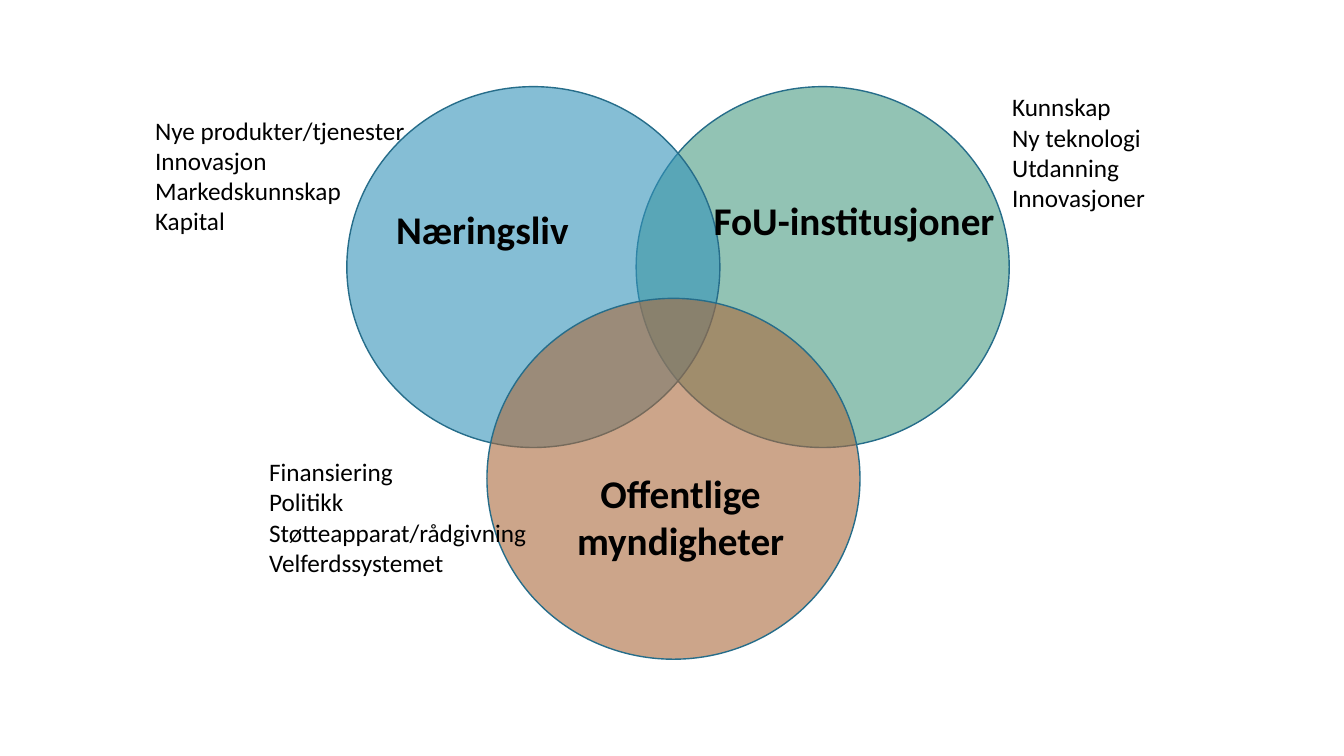
from lxml import etree
from pptx import Presentation
from pptx.dml.color import RGBColor
from pptx.enum import shapes, text
from pptx.oxml import ns
from pptx.util import Inches, Pt

CIRCLE_SIZE = (3.7, 3.58)
CIRCLES = [
    (6.31, 0.86, "4A9B83"),
    (3.44, 0.86, "3494BA"),
    (4.83, 2.96, "AA693C"),
]
LEFT, CENTER = text.PP_ALIGN.LEFT, text.PP_ALIGN.CENTER
SECTORS = [
    ("Næringsliv", (3.83, 1.99, 2.48, 0.57), LEFT),
    ("FoU-institusjoner", (6.98, 1.9, 3.09, 0.57), LEFT),
    ("Offentlige myndigheter", (5.51, 4.61, 2.48, 1.04), CENTER),
]
CONTRIBUTIONS = [
    (["Finansiering", "Politikk", "Støtteapparat/rådgivning", "Velferdssystemet"],
     (2.57, 4.48, 2.78, 1.31)),
    (["Kunnskap", "Ny teknologi", "Utdanning", "Innovasjoner"],
     (9.94, 0.86, 1.53, 1.31)),
    (["Nye produkter/tjenester", "Innovasjon", "Markedskunnskap", "Kapital"],
     (1.44, 1.09, 2.7, 1.31)),
]


def color(value):
    return RGBColor.from_string(value)


def add_circle(slide, left, top, fill):
    box = [Inches(n) for n in (left, top, *CIRCLE_SIZE)]
    shape = slide.shapes.add_shape(shapes.MSO_SHAPE.OVAL, *box)
    shape.shadow.inherit = False
    shape.fill.solid()
    shape.fill.fore_color.rgb = color(fill)
    fill_color = shape.fill._xPr.find(ns.qn("a:solidFill"))[0]
    etree.SubElement(fill_color, ns.qn("a:alpha"), val="60000")
    shape.line.color.rgb = color("266D8A")
    shape.line.width = Pt(1)


def add_text(slide, lines, box, size, bold=False, wrap=True, align=LEFT):
    shape = slide.shapes.add_textbox(*[Inches(n) for n in box])
    frame = shape.text_frame
    frame.word_wrap = wrap
    frame.auto_size = text.MSO_AUTO_SIZE.SHAPE_TO_FIT_TEXT
    for index, line in enumerate(lines):
        paragraph = frame.add_paragraph() if index else frame.paragraphs[0]
        paragraph.alignment = align
        run = paragraph.add_run()
        run.text = line
        run.font.name = "Calibri"
        run.font.size = Pt(size)
        run.font.bold = bold
        run.font.color.rgb = color("000000")


def main():
    presentation = Presentation()
    presentation.slide_width = Inches(13.33)
    presentation.slide_height = Inches(7.5)
    slide = presentation.slides.add_slide(presentation.slide_layouts[6])
    for left, top, fill in CIRCLES:
        add_circle(slide, left, top, fill)
    for name, box, align in SECTORS:
        add_text(slide, [name], box, 28, bold=True, align=align)
    for lines, box in CONTRIBUTIONS:
        add_text(slide, lines, box, 18, wrap=False)
    presentation.save("out.pptx")


if __name__ == "__main__":
    main()
